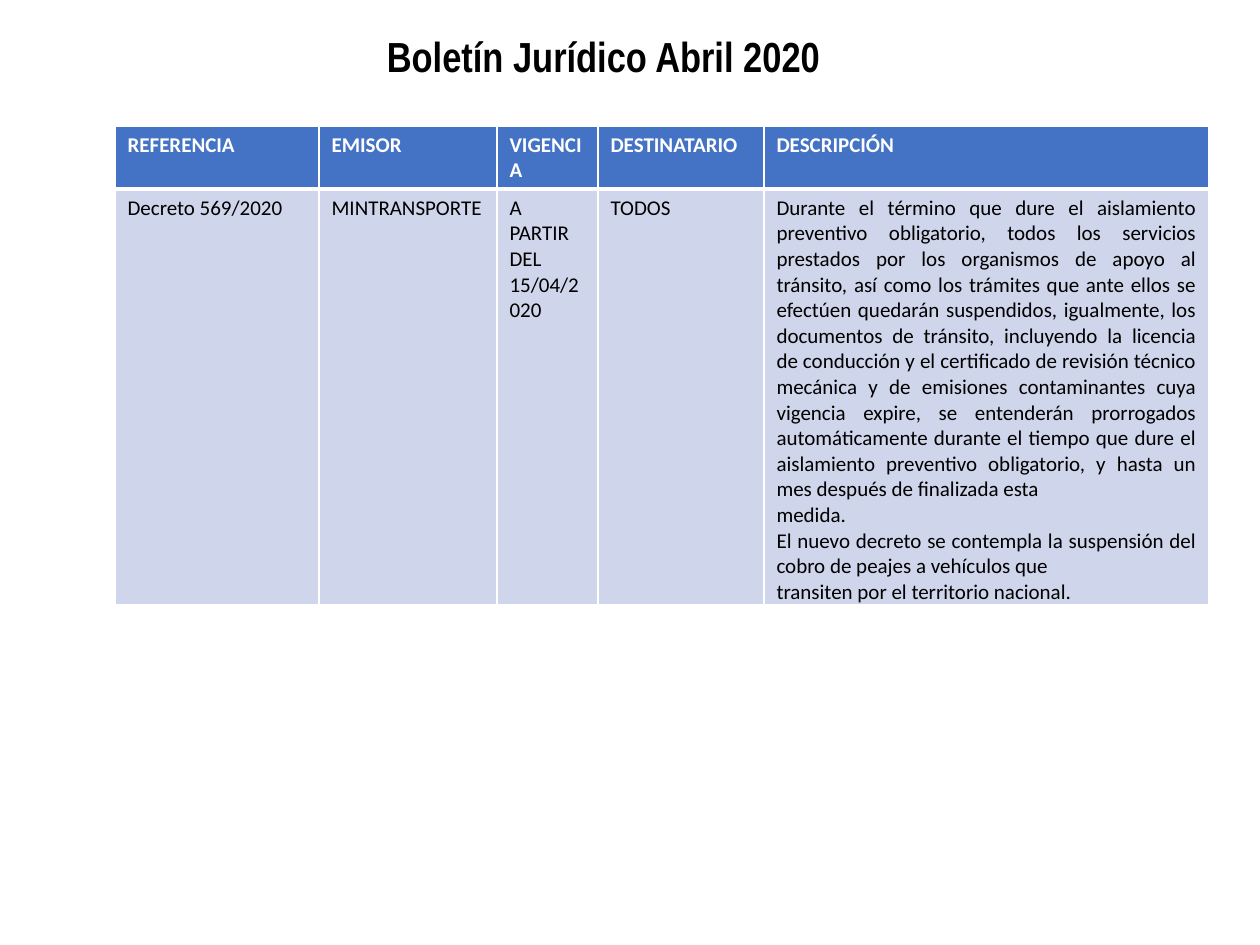
from lxml import etree
from pptx import Presentation
from pptx import util as u
from pptx.dml.color import RGBColor
from pptx.enum import text
from pptx.oxml import ns

PX = 914400 / 126
COLORS = {"ink": "000000", "white": "FFFFFF", "header": "4472C4", "body": "CFD5EA"}
HEADINGS = ["REFERENCIA", "EMISOR", "VIGENCIA", "DESTINATARIO", "DESCRIPCIÓN"]
DESCRIPTION = [
    "Durante el término que dure el aislamiento preventivo obligatorio, todos los "
    "servicios prestados por los organismos de apoyo al tránsito, así como los trámites "
    "que ante ellos se efectúen quedarán suspendidos, igualmente, los documentos de "
    "tránsito, incluyendo la licencia de conducción y el certificado de revisión técnico "
    "mecánica y de emisiones contaminantes cuya vigencia expire, se entenderán "
    "prorrogados automáticamente durante el tiempo que dure el aislamiento preventivo "
    "obligatorio, y hasta un mes después de finalizada esta",
    "medida.",
    "El nuevo decreto se contempla la suspensión del cobro de peajes a vehículos que",
    "transiten por el territorio nacional.",
]
DECREE = ["Decreto 569/2020", "MINTRANSPORTE", "A PARTIR DEL 15/04/2020", "TODOS",
          "\n".join(DESCRIPTION)]
COLUMN_WIDTHS = [204, 178, 101, 166, 445]
ROW_HEIGHT = 52


def px(length):
    return u.Emu(round(length * PX))


def rgb(name):
    return RGBColor.from_string(COLORS[name])


def write(frame, words, font="Calibri", size=12, color="ink", bold=False, align=None):
    frame.text = words
    for paragraph in frame.paragraphs:
        paragraph.alignment = align
        for run in paragraph.runs:
            run.font.name = font
            run.font.size = u.Pt(size)
            run.font.bold = bold
            run.font.color.rgb = rgb(color)


def add_borders(cell, **widths):
    properties = cell._tc.get_or_add_tcPr()
    for side in "LRTB":
        line = etree.SubElement(properties, ns.qn(f"a:ln{side}"),
                                w=str(u.Pt(widths.get(side, 1))))
        solid = etree.SubElement(line, ns.qn("a:solidFill"))
        etree.SubElement(solid, ns.qn("a:srgbClr"), val=COLORS["white"])


def paint(cell, color):
    cell.fill.solid()
    cell.fill.fore_color.rgb = rgb(color)


def place_title(slide, left, top, width, height):
    title = slide.shapes.title
    title.left, title.top, title.width, title.height = map(px, (left, top, width, height))
    frame = title.text_frame
    frame.word_wrap = True
    frame.auto_size = text.MSO_AUTO_SIZE.SHAPE_TO_FIT_TEXT
    frame.vertical_anchor = text.MSO_ANCHOR.TOP
    write(frame, "Boletín Jurídico Abril 2020", font="Arial Narrow", size=24, bold=True,
          align=text.PP_ALIGN.CENTER)


def place_bulletin(slide, left, top):
    bulletin = slide.shapes.add_table(
        2, len(HEADINGS), px(left), px(top), px(sum(COLUMN_WIDTHS)), px(2 * ROW_HEIGHT)).table
    for row in bulletin.rows:
        row.height = px(ROW_HEIGHT)
    for index, width in enumerate(COLUMN_WIDTHS):
        bulletin.columns[index].width = px(width)
        heading, detail = bulletin.cell(0, index), bulletin.cell(1, index)
        write(heading.text_frame, HEADINGS[index], color="white", bold=True)
        add_borders(heading, B=3)
        paint(heading, "header")
        is_description = index == len(HEADINGS) - 1
        write(detail.text_frame, DECREE[index],
              align=text.PP_ALIGN.JUSTIFY if is_description else None)
        add_borders(detail, T=3)
        paint(detail, "body")


def main():
    deck = Presentation()
    deck.slide_width, deck.slide_height = px(1260), px(945)
    slide = deck.slides.add_slide(deck.slide_layouts[5])
    place_title(slide, 55, 24, 1097, 63)
    place_bulletin(slide, 115, 126)
    deck.save("out.pptx")


if __name__ == "__main__":
    main()
